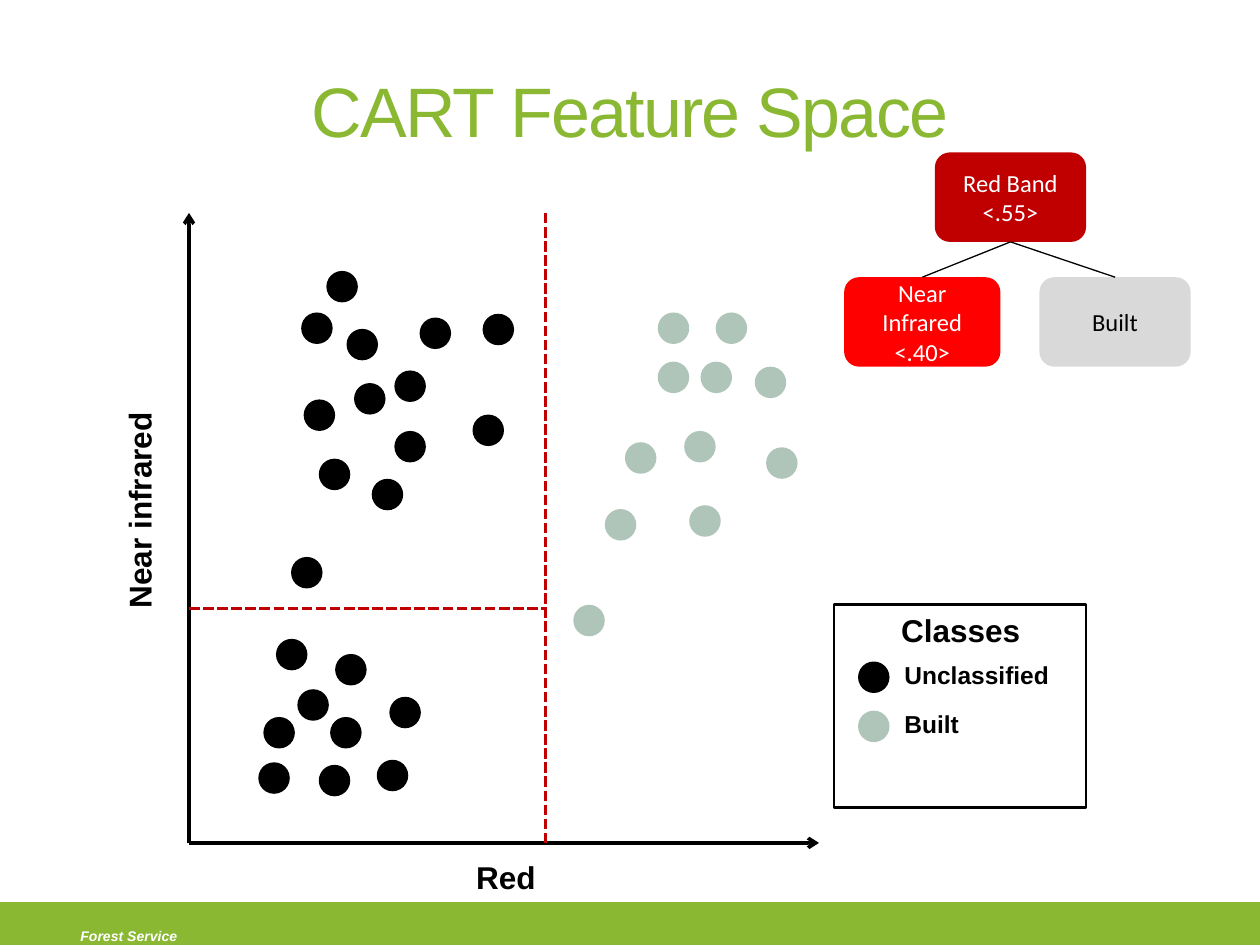
from lxml import etree
from pptx import Presentation
from pptx.dml.color import RGBColor
from pptx.enum.dml import MSO_LINE
from pptx.enum.shapes import MSO_CONNECTOR, MSO_SHAPE
from pptx.enum.text import MSO_ANCHOR, MSO_AUTO_SIZE, PP_ALIGN
from pptx.oxml.ns import qn
from pptx.util import Pt

EMU_PER_PX = 9144
RECTANGLE = MSO_SHAPE.RECTANGLE
ROUNDED = MSO_SHAPE.ROUNDED_RECTANGLE
CIRCLE = MSO_SHAPE.FLOWCHART_CONNECTOR
STRAIGHT = MSO_CONNECTOR.STRAIGHT
DASH = MSO_LINE.SQUARE_DOT
MIDDLE = MSO_ANCHOR.MIDDLE
GROW = MSO_AUTO_SIZE.SHAPE_TO_FIT_TEXT
LEFT, CENTER = PP_ALIGN.LEFT, PP_ALIGN.CENTER
BOTTOM_SITE, TOP_SITE = 2, 0

BLACK, WHITE, GREEN = "000000", "FFFFFF", "8AB833"
DARK_RED, RED, GRAY, SAGE = "C00000", "FF0000", "D9D9D9", "AFC5B9"
DOT_SIZE = 25

BUILT_DOTS = [
    (372, 118), (393, 173), (449, 122), (397, 232), (458, 186), (305, 311),
    (346, 182), (406, 118), (330, 235), (372, 79), (418, 79),
]
UNCLASSIFIED_DOTS = [
    (59, 400), (86, 378), (69, 338), (103, 438), (112, 400), (116, 350),
    (55, 436), (149, 434), (109, 46), (89, 79), (125, 92), (131, 135),
    (183, 83), (103, 195), (233, 80), (163, 173), (91, 148), (163, 125),
    (145, 211), (225, 160), (81, 273), (159, 384),
]


def px(*values):
    return [value * EMU_PER_PX for value in values]


def rgb(color):
    return RGBColor.from_string(color)


def format_text(shape, text, size, color, font="Arial", bold=False, align=CENTER):
    shape.text_frame.text = text
    for paragraph in shape.text_frame.paragraphs:
        paragraph.alignment = align
        for run in paragraph.runs:
            run.font.name = font
            run.font.size = Pt(size)
            run.font.bold = bold
            run.font.color.rgb = rgb(color)


def add_shape(slide, kind, box, fill=None, line=None, width=1):
    shape = slide.shapes.add_shape(kind, *px(*box))
    shape.shadow.inherit = False
    if fill:
        shape.fill.solid()
        shape.fill.fore_color.rgb = rgb(fill)
    else:
        shape.fill.background()
    if line:
        shape.line.color.rgb = rgb(line)
        shape.line.width = Pt(width)
    else:
        shape.line.fill.background()
    return shape


def add_dot(slide, left, top, color):
    add_shape(slide, CIRCLE, (left, top, DOT_SIZE, DOT_SIZE), color)


def add_label(slide, box, text, size, color=BLACK, align=CENTER):
    label = slide.shapes.add_textbox(*px(*box))
    label.text_frame.word_wrap = True
    label.text_frame.auto_size = GROW
    format_text(label, text, size, color, bold=True, align=align)
    return label


def add_line(slide, start, end, color, width, dash=None, arrow=False):
    connector = slide.shapes.add_connector(STRAIGHT, *px(*start, *end))
    connector.line.color.rgb = rgb(color)
    connector.line.width = Pt(width)
    if dash:
        connector.line.dash_style = dash
    if arrow:
        outline = connector.line._get_or_add_ln()
        etree.SubElement(outline, qn("a:tailEnd"), type="arrow")
    etree.SubElement(connector._element.spPr, qn("a:effectLst"))
    return connector


def add_footer(slide, left, top, width, height):
    add_shape(slide, RECTANGLE, (left, top, width, height), GREEN, GREEN, 2)
    label = add_label(slide, (left + 54, top + 14, 204, 24), "Forest Service", 8, WHITE, LEFT)
    label.text_frame.paragraphs[0].runs[0].font.italic = True


def add_title(slide, left, top, width, height):
    title = slide.shapes.title
    title.left, title.top, title.width, title.height = px(left, top, width, height)
    title.text_frame.vertical_anchor = MIDDLE
    format_text(title, "CART Feature Space", 40, GREEN)
    title.text_frame.paragraphs[0].runs[0].font._element.set("spc", "-100")


def add_feature_space(slide, left, top, width, height):
    bottom = top + height
    split_x, split_y = left + 283, top + 314
    origin = (left, bottom)
    for end in ((left, top), (left + width, bottom)):
        add_line(slide, origin, end, BLACK, 2, arrow=True)
    for dots, color in ((BUILT_DOTS, SAGE), (UNCLASSIFIED_DOTS, BLACK)):
        for x, y in dots:
            add_dot(slide, left + x, top + y, color)
    add_line(slide, (split_x, top), (split_x, bottom), DARK_RED, 2, DASH)
    add_line(slide, (left, split_y), (split_x, split_y), DARK_RED, 2, DASH)
    vertical_label = add_label(slide, (left - 128, top + 216, 177, 40), "Near infrared", 18)
    vertical_label.rotation = 270
    add_label(slide, (left + 163, bottom + 7, 177, 40), "Red", 18)


def add_decision_tree(slide, left, top):
    nodes = []
    for x, y, width, text, fill, color in (
        (72, 0, 120, "Red Band\n<.55>", DARK_RED, WHITE),
        (0, 99, 124, "Near Infrared\n<.40>", RED, WHITE),
        (155, 99, 120, "Built", GRAY, BLACK),
    ):
        node = add_shape(slide, ROUNDED, (left + x, top + y, width, 71), fill)
        node.text_frame.word_wrap = True
        node.text_frame.vertical_anchor = MIDDLE
        format_text(node, text, 14, color, "Calibri")
        nodes.append(node)
    root, *children = nodes
    for child in children:
        branch = add_line(slide, (left, top), (left, top), BLACK, 0.75)
        branch.begin_connect(root, BOTTOM_SITE)
        branch.end_connect(child, TOP_SITE)


def add_legend(slide, left, top, width, height):
    add_shape(slide, RECTANGLE, (left, top, width, height), line=BLACK, width=1.5)
    add_label(slide, (left + 12, top, 177, 40), "Classes", 18)
    for index, (name, color) in enumerate((("Unclassified", BLACK), ("Built", SAGE))):
        row_top = top + 39 * (index + 1)
        add_dot(slide, left + 19, row_top + 6, color)
        add_label(slide, (left + 46, row_top, 177, 34), name, 14, align=LEFT)


def main():
    presentation = Presentation()
    presentation.slide_width, presentation.slide_height = px(1000, 750)
    slide = presentation.slides.add_slide(presentation.slide_layouts[5])
    add_footer(slide, 0, 717, 1000, 33)
    add_title(slide, 50, 33, 900, 108)
    add_feature_space(slide, 150, 169, 500, 500)
    add_decision_tree(slide, 670, 121)
    add_legend(slide, 662, 480, 200, 161)
    presentation.save("out.pptx")


if __name__ == "__main__":
    main()
